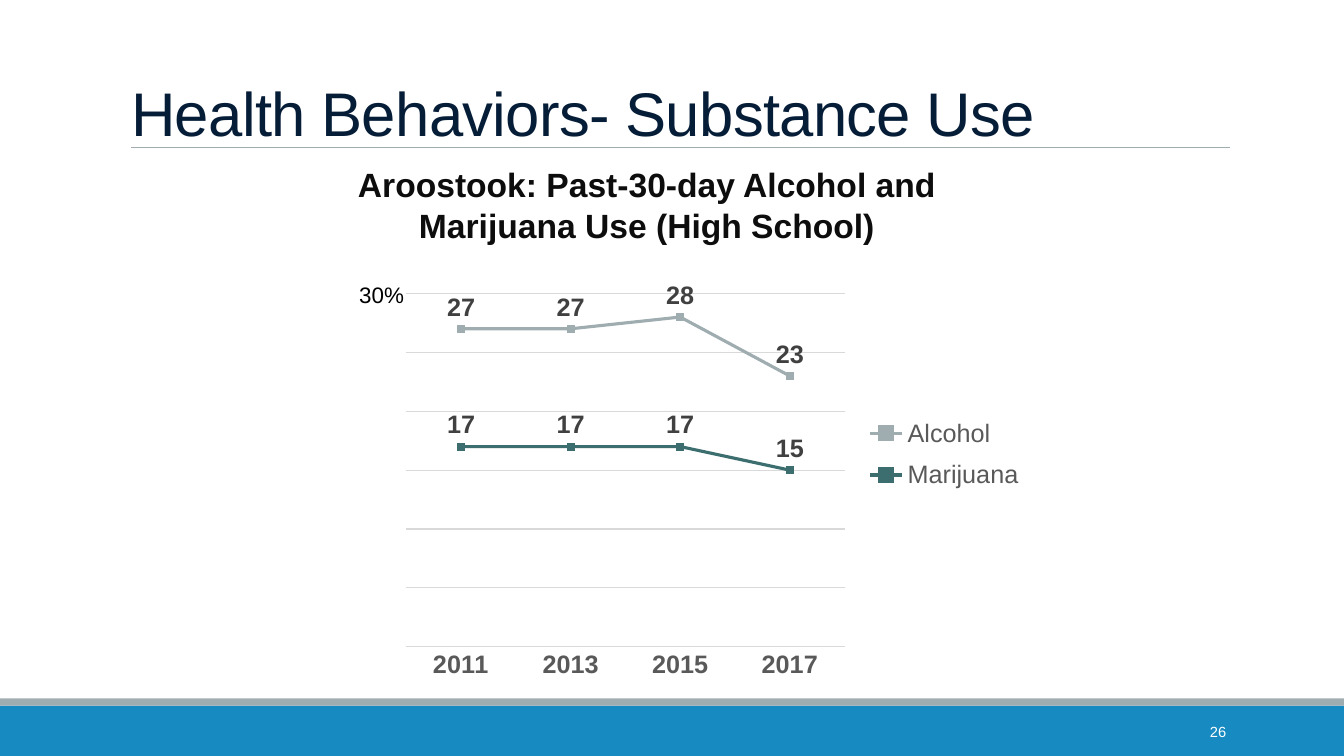
from lxml.etree import SubElement
from pptx import Presentation
from pptx.chart.data import CategoryChartData
from pptx.dml.color import RGBColor
from pptx.enum.chart import (XL_CHART_TYPE, XL_LABEL_POSITION, XL_LEGEND_POSITION,
                             XL_MARKER_STYLE, XL_TICK_MARK)
from pptx.enum.shapes import MSO_CONNECTOR, MSO_SHAPE
from pptx.enum.text import MSO_ANCHOR, MSO_AUTO_SIZE, PP_ALIGN
from pptx.oxml import parse_xml
from pptx.oxml.ns import nsdecls, qn
from pptx.util import Inches, Pt

GRAY, TEAL, BLUE, GRID = "9FADB1", "3C6E6F", "178AC1", "D9D9D9"


def color(hex_value):
    return RGBColor.from_string(hex_value)


def style_font(font, size, hex_value, bold=False):
    for name, value in {"name": "Arial", "size": Pt(size), "bold": bold}.items():
        setattr(font, name, value)
    font.color.rgb = color(hex_value)


deck = Presentation()
deck.slide_width, deck.slide_height = Inches(13.33), Inches(7.5)
page = deck.slides.add_slide(deck.slide_layouts[5])

# Footer bands and the rule under the title
for top, height, fill in [(7, 0.5, BLUE), (6.93, 0.07, GRAY)]:
    band = page.shapes.add_shape(MSO_SHAPE.RECTANGLE, 0, Inches(top),
                                 deck.slide_width, Inches(height))
    band.shadow.inherit = False
    band.fill.solid()
    band.fill.fore_color.rgb = color(fill)
    band.line.fill.background()

rule = page.shapes.add_connector(MSO_CONNECTOR.STRAIGHT, Inches(1.3), Inches(1.46),
                                 Inches(12.2), Inches(1.46))
rule.line.color.rgb = color(GRAY)
rule.line.width = Pt(0.5)
SubElement(rule._element.spPr, qn("a:effectLst"))

# Title
title = page.shapes.title
title.left, title.top, title.width, title.height = map(Inches, (1.2, 0.47, 11.72, 1.06))
title.text_frame.text = "Health Behaviors- Substance Use"
title.text_frame.vertical_anchor = MSO_ANCHOR.BOTTOM
title.text_frame.auto_size = MSO_AUTO_SIZE.NONE
para = title.text_frame.paragraphs[0]
para.alignment = PP_ALIGN.LEFT
para.line_spacing = 0.85
span = para.runs[0]
style_font(span.font, 44, "061D38")
span.font._element.set("spc", "-50")

# Line chart
data = CategoryChartData()
data.categories = ["2011", "2013", "2015", "2017"]
data.add_series("Alcohol", (27, 27, 28, 23))
data.add_series("Marijuana", (17, 17, 17, 15))
chart = page.shapes.add_chart(XL_CHART_TYPE.LINE_MARKERS, Inches(3.91), Inches(2.79),
                              Inches(6.31), Inches(4.03), data).chart
chart.has_title = False
style_font(chart.font, 10, "000000")

years = chart.category_axis
years.major_tick_mark = XL_TICK_MARK.NONE
style_font(years.tick_labels.font, 18, "595959", True)

percent = chart.value_axis
percent.minimum_scale, percent.maximum_scale, percent.major_unit = 0, 30, 5
percent.visible = False
percent.has_major_gridlines = True

for line in (years.format.line, percent.major_gridlines.format.line):
    line.color.rgb = color(GRID)
    line.width = Pt(0.75)

plot = chart.plots[0]
plot.vary_by_categories = False
for series, hex_value in zip(plot.series, (GRAY, TEAL)):
    series.smooth = False
    series.format.line.color.rgb = color(hex_value)
    series.format.line.width = Pt(2.25)
    marker = series.marker
    marker.style, marker.size = XL_MARKER_STYLE.SQUARE, 5
    marker.format.fill.solid()
    marker.format.fill.fore_color.rgb = color(hex_value)
    marker.format.line.color.rgb = color(hex_value)
    labels = series.data_labels
    labels.show_value = True
    labels.position = XL_LABEL_POSITION.ABOVE
    style_font(labels.font, 18, "404040", True)

chart.has_legend = True
legend = chart.legend
legend.position = XL_LEGEND_POSITION.RIGHT
legend.include_in_layout = False
style_font(legend.font, 18, "595959")


def place(element, target, x, y, w, h):
    """Give a chart part a fixed place, in fractions of the chart."""
    for old in element.findall(qn("c:layout")):
        element.remove(old)
    inner = '<c:layoutTarget val="inner"/>' if target == "inner" else ""
    sizes = "".join(f'<c:{tag} val="{value}"/>'
                    for tag, value in zip("xywh", (x, y, w, h)))
    layout = parse_xml(
        f'<c:layout {nsdecls("c")}><c:manualLayout>{inner}<c:xMode val="edge"/>'
        f'<c:yMode val="edge"/>{sizes}</c:manualLayout></c:layout>')
    element.insert(0 if target == "inner" else 1, layout)


place(chart._chartSpace.chart.plotArea, "inner", 0.019, 0.029, 0.689, 0.871)
place(legend._element, "legend", 0.74, 0.305, 0.25, 0.24)

# Axis label, chart heading and page number
texts = [
    ("30%", (2.71, 2.74, 2.15, 0.3), PP_ALIGN.CENTER, MSO_ANCHOR.TOP, 16, "000000", False),
    ("Aroostook: Past-30-day Alcohol and Marijuana Use (High School)",
     (3.08, 1.58, 6.67, 0.91), PP_ALIGN.CENTER, MSO_ANCHOR.TOP, 24, "0D0D0D", True),
    ("26", (10.83, 7.06, 1.43, 0.4), PP_ALIGN.RIGHT, MSO_ANCHOR.MIDDLE, 10.5, "FFFFFF", False),
]
for words, place_in, alignment, anchor, size, hex_value, bold in texts:
    box = page.shapes.add_textbox(*map(Inches, place_in))
    frame = box.text_frame
    frame.word_wrap = True
    frame.vertical_anchor = anchor
    para = frame.paragraphs[0]
    para.alignment = alignment
    span = para.add_run()
    span.text = words
    style_font(span.font, size, hex_value, bold)

deck.save("out.pptx")
